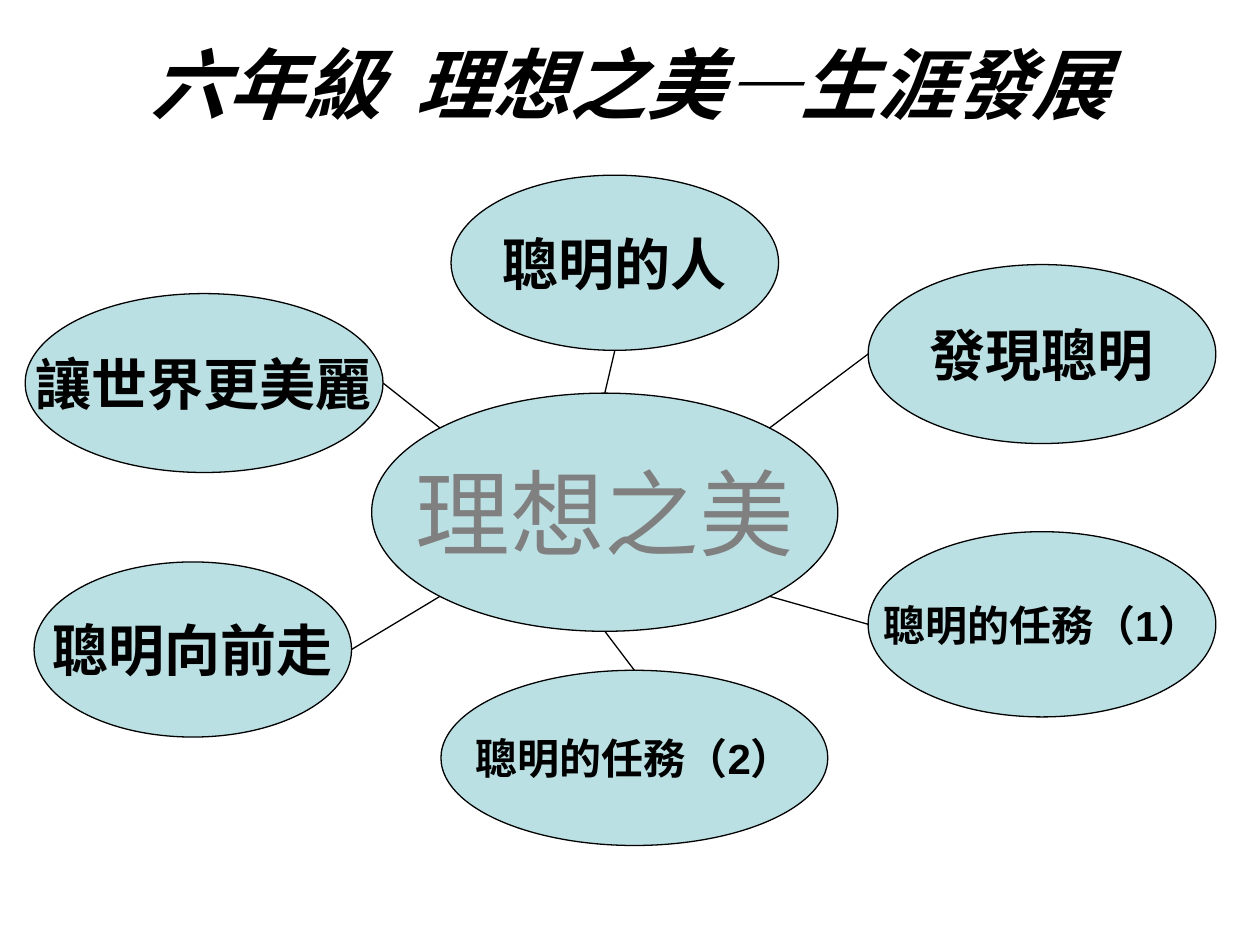
from dataclasses import dataclass
from math import sqrt

from pptx import Presentation
from pptx.dml import color
from pptx.enum import shapes, text
from pptx.oxml import xmlchemy
from pptx.util import Inches, Pt

BLACK = color.RGBColor(0x00, 0x00, 0x00)
GRAY = color.RGBColor(0x80, 0x80, 0x80)
PALE_TEAL = color.RGBColor(0xBB, 0xE0, 0xE3)
FONT = "Arial"
DIAGONAL = 1 / sqrt(2)

TOP = (0, -1)
BOTTOM = (0, 1)
LEFT = (-1, 0)
RIGHT = (1, 0)
TOP_LEFT = (-DIAGONAL, -DIAGONAL)
TOP_RIGHT = (DIAGONAL, -DIAGONAL)
BOTTOM_LEFT = (-DIAGONAL, DIAGONAL)
BOTTOM_RIGHT = (DIAGONAL, DIAGONAL)


@dataclass(frozen=True)
class Bubble:
    label: str
    left: float
    top: float
    width: float
    height: float
    size: int = 32
    bold: bool = True
    font_color: color.RGBColor = BLACK

    def rim(self, direction: tuple) -> tuple:
        across, down = direction
        return (
            Inches(self.left + self.width / 2 * (1 + across)),
            Inches(self.top + self.height / 2 * (1 + down)),
        )


@dataclass(frozen=True)
class Spoke:
    bubble: Bubble
    hub_side: tuple
    bubble_side: tuple


HUB = Bubble("理想之美", 2.95, 3.12, 3.7, 1.89, 54, False, GRAY)
SPOKES = [
    Spoke(Bubble("聰明的人", 3.58, 1.39, 2.6, 1.39), TOP, BOTTOM),
    Spoke(Bubble("發現聰明", 6.89, 2.1, 2.76, 1.42), TOP_RIGHT, LEFT),
    Spoke(Bubble("聰明的任務（1）", 6.89, 4.22, 2.76, 1.47, 24), BOTTOM_RIGHT, LEFT),
    Spoke(Bubble("聰明的任務（2）", 3.5, 5.32, 3.07, 1.39, 24), BOTTOM, TOP),
    Spoke(Bubble("聰明向前走", 0.27, 4.46, 2.52, 1.39), BOTTOM_LEFT, RIGHT),
    Spoke(Bubble("讓世界更美麗", 0.2, 2.33, 2.84, 1.42), TOP_LEFT, RIGHT),
]


def format_text(
    frame, size: int, bold: bool, font_color: color.RGBColor, italic: bool = False
) -> None:
    frame.vertical_anchor = text.MSO_ANCHOR.MIDDLE
    paragraph = frame.paragraphs[0]
    paragraph.alignment = text.PP_ALIGN.CENTER
    font = paragraph.runs[0].font
    font.name = FONT
    font.size = Pt(size)
    font.bold = bold
    font.italic = italic
    font.color.rgb = font_color


def format_line(line) -> None:
    line.color.rgb = BLACK
    line.width = Pt(0.75)


def draw_title(slide, wording: str) -> None:
    title = slide.shapes.title
    title.left, title.top = Inches(0.5), Inches(0)
    title.width, title.height = Inches(9), Inches(1.31)
    title.text_frame.text = wording
    format_text(title.text_frame, 44, True, BLACK, italic=True)


def draw_bubble(slide, bubble: Bubble) -> None:
    shape = slide.shapes.add_shape(
        shapes.MSO_SHAPE.OVAL,
        Inches(bubble.left),
        Inches(bubble.top),
        Inches(bubble.width),
        Inches(bubble.height),
    )
    shape.shadow.inherit = False
    shape.fill.solid()
    shape.fill.fore_color.rgb = PALE_TEAL
    format_line(shape.line)
    shape.text_frame.word_wrap = False
    shape.text_frame.text = bubble.label
    format_text(shape.text_frame, bubble.size, bubble.bold, bubble.font_color)


def draw_spoke(slide, spoke: Spoke) -> None:
    connector = slide.shapes.add_connector(
        shapes.MSO_CONNECTOR.STRAIGHT,
        *HUB.rim(spoke.hub_side),
        *spoke.bubble.rim(spoke.bubble_side),
    )
    format_line(connector.line)
    connector._element.spPr.append(xmlchemy.OxmlElement("a:effectLst"))


def main() -> None:
    presentation = Presentation()
    presentation.slide_width = Inches(10)
    presentation.slide_height = Inches(7.5)
    slide = presentation.slides.add_slide(presentation.slide_layouts[5])
    draw_title(slide, "六年級  理想之美—生涯發展")
    for bubble in [HUB] + [spoke.bubble for spoke in SPOKES]:
        draw_bubble(slide, bubble)
    for spoke in SPOKES:
        draw_spoke(slide, spoke)
    presentation.save("out.pptx")


if __name__ == "__main__":
    main()
